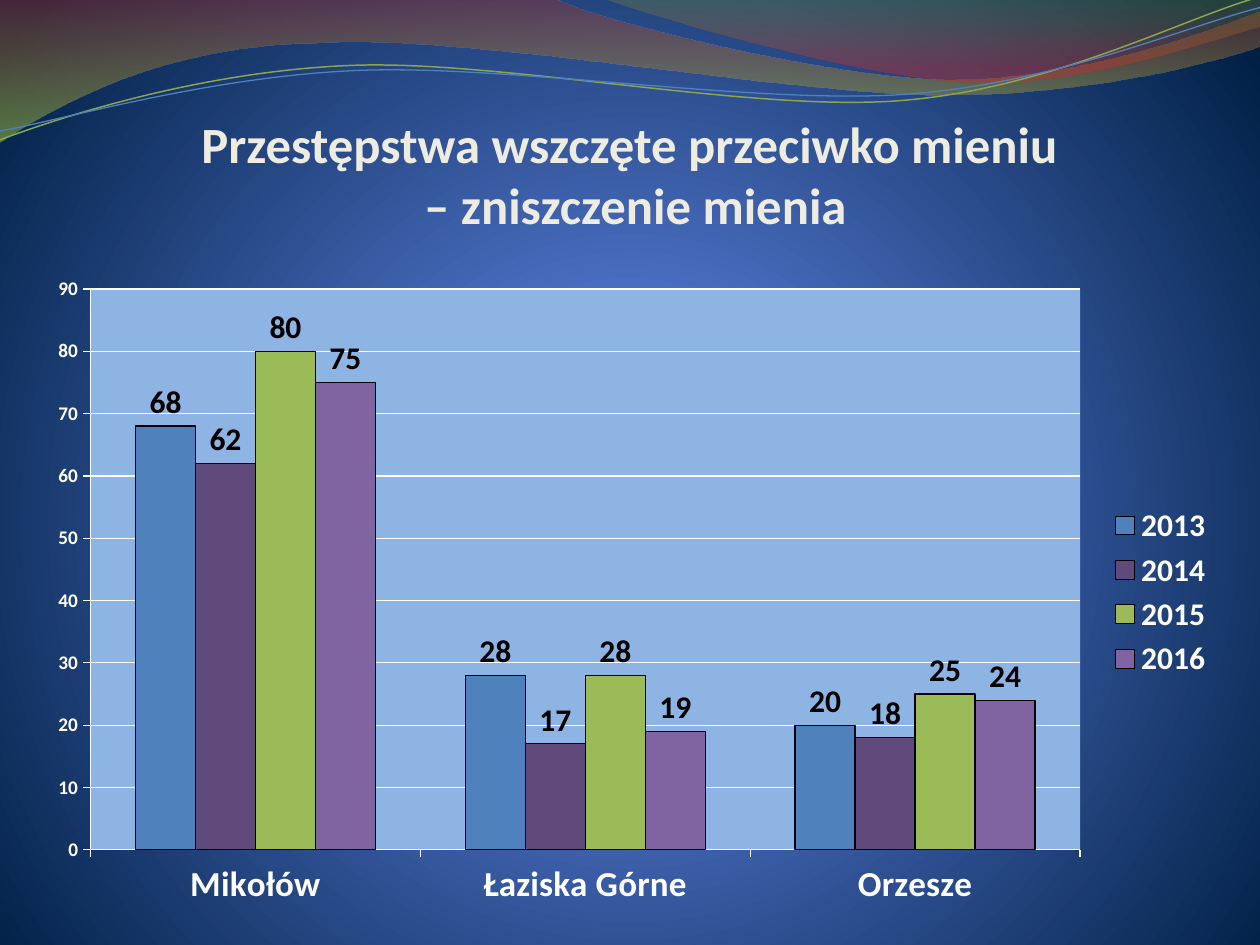
from math import cos, radians, sin

from lxml.etree import SubElement
from pptx import Presentation
from pptx.chart.data import CategoryChartData
from pptx.dml.color import RGBColor
from pptx.enum.chart import XL_CHART_TYPE, XL_LABEL_POSITION, XL_LEGEND_POSITION, XL_TICK_MARK
from pptx.enum.text import MSO_ANCHOR, PP_ALIGN
from pptx.oxml import parse_xml
from pptx.oxml.ns import nsdecls, qn
from pptx.util import Inches, Pt

FONT = "Calibri"
WHITE = RGBColor(0xFF, 0xFF, 0xFF)
BLACK = RGBColor(0, 0, 0)
CREAM = RGBColor(0xEE, 0xEC, 0xE1)
PLOT_BLUE = RGBColor(0x8E, 0xB4, 0xE3)
BLUE = RGBColor(0x4F, 0x81, 0xBD)
PLUM = RGBColor(0x60, 0x4A, 0x7B)
GREEN = RGBColor(0x9B, 0xBB, 0x59)
VIOLET = RGBColor(0x80, 0x64, 0xA2)
OLIVE = RGBColor(0x89, 0xA5, 0x4F)

TITLE = "Przestępstwa wszczęte przeciwko mieniu\v – zniszczenie mienia"
TOWNS = ["Mikołów", "Łaziska Górne", "Orzesze"]
YEARS = [
    ("2013", (68, 28, 20), BLUE),
    ("2014", (62, 17, 18), PLUM),
    ("2015", (80, 28, 25), GREEN),
    ("2016", (75, 19, 24), VIOLET),
]
PLOT_LAYOUT = {"x": 0.0465, "y": 0.0375, "w": 0.831, "h": 0.856}

# Gradient stops: position %, colour, opacity %
BACKGROUND = [(0, "4D75D6", 100), (25, "4E72C7", 100), (100, "001F44", 100)]
RADIAL = '<a:path path="circle"><a:fillToRect l="10000" t="110000" r="10000" b="100000"/></a:path>'
DOWNWARD = '<a:lin ang="5400000" scaled="0"/>'

# Outlines: one point is a straight step, three points are a Bézier step
WAVES = [
    ([[(0, -0.01)], [(4.4, -0.01)], [(4.76, 0.17), (6.64, 0.63), (7.58, 0.63)],
      [(8.53, 0.63), (9.58, 0.26), (10, 0.09)], [(10.01, 0.36)],
      [(9.83, 0.44), (8.7, 0.76), (7.46, 0.75)], [(6.22, 0.75), (3.82, 0.28), (2.57, 0.34)],
      [(1.29, 0.35), (0.46, 0.83), (-0.01, 1.13)], [(0, -0.01)]],
     [(0, "973330", 45), (100, "95C238", 55)]),
    ([[(4.79, -0.01)], [(5.09, 0.11), (6.82, 0.62), (7.69, 0.65)],
      [(8.56, 0.69), (9.61, 0.32), (10, 0.21)], [(10, 0)], [(4.79, -0.01)]],
     [(0, "769537", 30), (80, "BE3330", 45)]),
]
STRAND_TILT = -2.7
STRANDS = [
    ([[(0, 1.11)], [(0.48, 0.93), (1.58, 0.57), (2.77, 0.52)],
      [(3.95, 0.47), (5.93, 0.89), (7.13, 0.8)], [(8.33, 0.71), (9.38, 0.15), (9.98, -0.02)]],
     (4.99, 0.58), OLIVE, 0.85),
    ([[(0, 1.04)], [(0.47, 0.96), (1.64, 0.61), (2.83, 0.56)],
      [(4.03, 0.51), (5.97, 0.83), (7.17, 0.75)], [(8.36, 0.67), (9.41, 0.21), (10, 0.06)]],
     (5, 0.59), BLUE, 0.75),
]


def turn(steps, center, angle):
    """Rotate every point clockwise about center."""
    cx, cy = center
    c, d = cos(radians(angle)), sin(radians(angle))
    return [[(cx + (x - cx) * c - (y - cy) * d, cy + (x - cx) * d + (y - cy) * c)
             for x, y in step] for step in steps]


def add_outline(shapes, steps, close):
    """Build a freeform through the step ends, then bend its Bézier steps."""
    ends = [(Inches(x), Inches(y)) for x, y in (step[-1] for step in steps)]
    builder = shapes.build_freeform(*ends[0])
    builder.add_line_segments(ends[1:], close=close)
    sp = builder.convert_to_shape()
    sp.shadow.inherit = False
    lines = sp._element.spPr.findall(".//" + qn("a:lnTo"))
    for line, step in zip(lines, steps[1:]):
        if len(step) == 3:
            points = "".join(f'<a:pt x="{Inches(x) - sp.left}" y="{Inches(y) - sp.top}"/>'
                             for x, y in step)
            line.getparent().replace(line, parse_xml(
                f'<a:cubicBezTo {nsdecls("a")}>{points}</a:cubicBezTo>'))
    return sp


def set_gradient(fill, element, stops, direction):
    """Replace the solid fill inside element with a gradient."""
    fill.solid()
    solid = element.find(".//" + qn("a:solidFill"))
    gs = "".join(
        f'<a:gs pos="{pos * 1000}"><a:srgbClr val="{color}">'
        f'<a:alpha val="{opacity * 1000}"/></a:srgbClr></a:gs>'
        for pos, color, opacity in stops)
    solid.getparent().replace(solid, parse_xml(
        f'<a:gradFill {nsdecls("a")} rotWithShape="1"><a:gsLst>{gs}</a:gsLst>{direction}</a:gradFill>'))


def set_font(font, size, color, bold=True):
    for name, value in {"name": FONT, "size": Pt(size), "bold": bold}.items():
        setattr(font, name, value)
    font.color.rgb = color


def set_line(line, color, width=0.75):
    line.color.rgb = color
    line.width = Pt(width)


def add_title(s):
    tf = s.shapes.add_textbox(Inches(0.5), Inches(0.77), Inches(9), Inches(1.09)).text_frame
    for name, value in {"word_wrap": True, "vertical_anchor": MSO_ANCHOR.BOTTOM,
                        "margin_left": 0, "margin_right": 0,
                        "margin_top": Inches(0.05), "margin_bottom": 0}.items():
        setattr(tf, name, value)
    p = tf.paragraphs[0]
    p.text = TITLE
    p.alignment = PP_ALIGN.CENTER
    for r in p.runs:
        set_font(r.font, 29, CREAM)


def add_crime_chart(s):
    data = CategoryChartData()
    data.categories = TOWNS
    for year, values, _ in YEARS:
        data.add_series(year, values)
    chart = s.shapes.add_chart(XL_CHART_TYPE.COLUMN_CLUSTERED, Inches(0.28), Inches(2.1),
                               Inches(9.45), Inches(5.2), data).chart
    set_font(chart.font, 18, WHITE, False)
    chart.has_title = False
    chart.has_legend = True
    chart.legend.position = XL_LEGEND_POSITION.RIGHT
    chart.legend.include_in_layout = False
    set_font(chart.legend.font, 18, WHITE)

    for axis, size in ((chart.category_axis, 20), (chart.value_axis, 11)):
        axis.major_tick_mark = XL_TICK_MARK.OUTSIDE
        set_font(axis.tick_labels.font, size, WHITE)
        set_line(axis.format.line, WHITE)
    axis = chart.value_axis
    axis.minimum_scale, axis.maximum_scale, axis.major_unit = 0, 90, 10
    set_line(axis.major_gridlines.format.line, WHITE)

    plot = chart.plots[0]
    plot.gap_width, plot.overlap, plot.vary_by_categories = 150, 0, False
    for series, (_, _, color) in zip(plot.series, YEARS):
        series.format.fill.solid()
        series.format.fill.fore_color.rgb = color
        set_line(series.format.line, BLACK)
        labels = series.data_labels
        labels.show_value = True
        labels.position = XL_LABEL_POSITION.OUTSIDE_END
        set_font(labels.font, 18, BLACK)

    area = chart._chartSpace.find(".//" + qn("c:plotArea"))
    area.append(parse_xml(
        f'<c:spPr {nsdecls("c", "a")}><a:solidFill><a:srgbClr val="{PLOT_BLUE}"/></a:solidFill></c:spPr>'))
    for old in area.findall(qn("c:layout")):
        area.remove(old)
    layout = parse_xml(f'<c:layout {nsdecls("c")}/>')
    area.insert(0, layout)
    manual = SubElement(layout, qn("c:manualLayout"))
    settings = {"layoutTarget": "inner", "xMode": "edge", "yMode": "edge", **PLOT_LAYOUT}
    for name, value in settings.items():
        SubElement(manual, qn(f"c:{name}")).set("val", str(value))


def main():
    prs = Presentation()
    prs.slide_width, prs.slide_height = Inches(10), Inches(7.5)
    s = prs.slides.add_slide(prs.slide_layouts[6])
    set_gradient(s.background.fill, s._element, BACKGROUND, RADIAL)
    for steps, stops in WAVES:
        sp = add_outline(s.shapes, steps, True)
        set_gradient(sp.fill, sp._element.spPr, stops, DOWNWARD)
        sp.line.fill.background()
    strands = s.shapes.add_group_shape()
    for steps, center, color, width in STRANDS:
        sp = add_outline(strands.shapes, turn(steps, center, -STRAND_TILT), False)
        sp.rotation = STRAND_TILT
        sp.fill.background()
        set_line(sp.line, color, width)
    add_title(s)
    add_crime_chart(s)
    prs.save("out.pptx")


if __name__ == "__main__":
    main()
